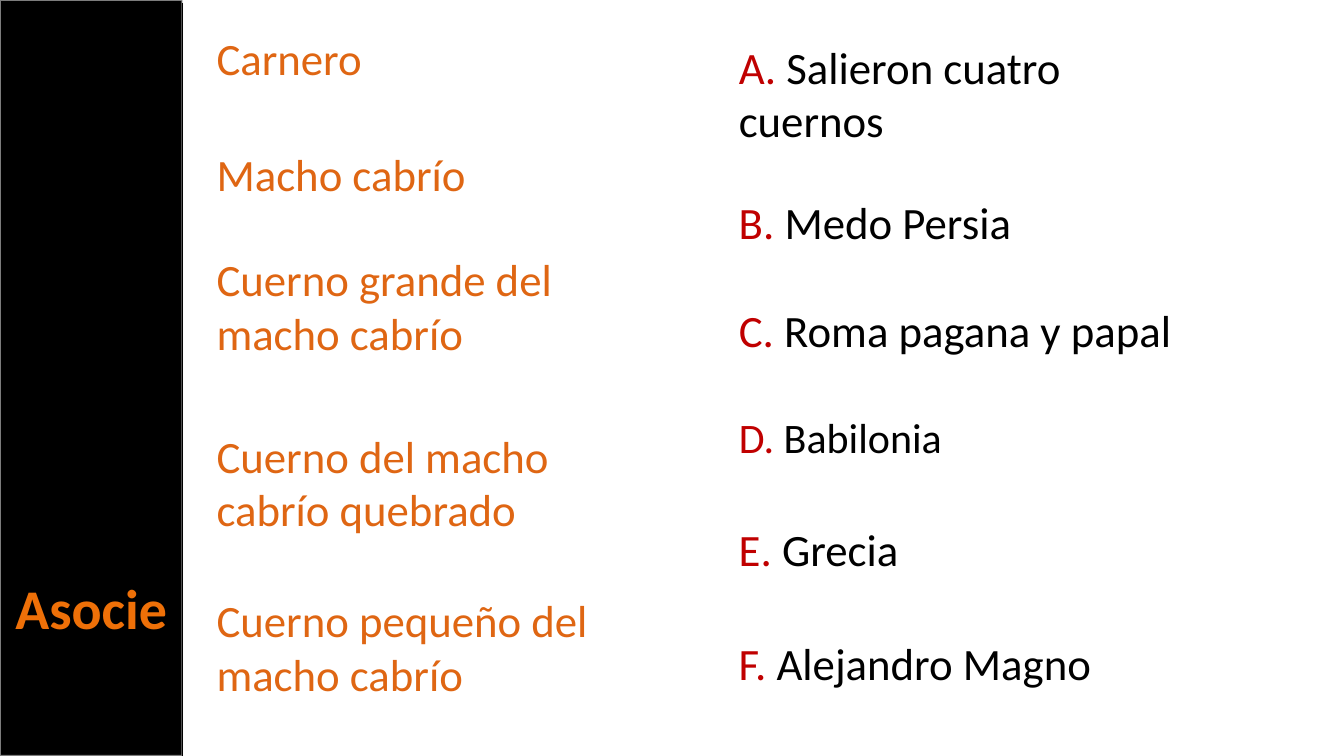
from pptx import Presentation
from pptx.dml.color import RGBColor
from pptx.enum import shapes, text
from pptx.oxml.ns import qn
from pptx.util import Pt
from lxml import etree

BLACK = RGBColor(0x00, 0x00, 0x00)
PALE = RGBColor(0xF9, 0xF9, 0xF9)
ORANGE = RGBColor(0xDF, 0x66, 0x13)
BRIGHT_ORANGE = RGBColor(0xEE, 0x70, 0x08)
RED = RGBColor(0xC0, 0x00, 0x00)
FONT = "Calibri"

# Content: symbols (text, top, width, lines)
HEADING = "Asocie"
SYMBOLS = [
    ("Carnero", 18.7, 330, 1),
    ("Macho cabrío", 101.5, 276, 1),
    ("Cuerno grande del macho cabrío", 176.4, 297, 2),
    ("Cuerno del macho cabrío quebrado", 302.4, 316, 2),
    ("Cuerno pequeño del macho cabrío", 419.8, 330, 2),
]
# Meanings (text, top, width, lines, size); letters follow the order
MEANINGS = [
    ("Salieron cuatro cuernos", 24.5, 326, 2, 32),
    ("Medo Persia", 135.4, 360, 1, 32),
    ("Roma pagana y papal", 212.4, 433, 1, 32),
    ("Babilonia", 290.2, 301, 1, 30),
    ("Grecia", 369.4, 402, 1, 32),
    ("Alejandro Magno", 450.7, 402, 1, 32),
]

# Layout
SLIDE_W, SLIDE_H = 960, 540
BAR_W = 130.3
SYMBOL_LEFT, MEANING_LEFT = 147.6, 520.6
LINE_SPACING, INSETS = 1.2, 7.2

deck = Presentation()
deck.slide_width, deck.slide_height = Pt(SLIDE_W), Pt(SLIDE_H)
slide = deck.slides.add_slide(deck.slide_layouts[5])


def write(paragraph, pieces, size, bold=False):
    for words, color in pieces:
        run = paragraph.add_run()
        run.text = words
        run.font.name, run.font.size, run.font.bold = FONT, Pt(size), bold
        run.font.color.rgb = color


def add_entry(pieces, left, top, width, lines, size=32):
    height = lines * size * LINE_SPACING + INSETS
    entry = slide.shapes.add_textbox(Pt(left), Pt(top), Pt(width), Pt(height))
    entry.text_frame.word_wrap = True
    entry.text_frame.auto_size = text.MSO_AUTO_SIZE.SHAPE_TO_FIT_TEXT
    write(entry.text_frame.paragraphs[0], pieces, size)


# Side bar, behind the heading
bar = slide.shapes.add_shape(shapes.MSO_SHAPE.RECTANGLE, 0, 0, Pt(BAR_W), Pt(SLIDE_H))
bar.shadow.inherit = False
bar.fill.solid()
bar.fill.fore_color.rgb = BLACK
bar.line.color.rgb = PALE
bar.line.width = Pt(1.35)
outline_color = bar.line.fill._xPr.find(".//" + qn("a:srgbClr"))
etree.SubElement(outline_color, qn("a:alpha")).set("val", "50000")

# Heading
heading = slide.shapes.title
heading._element.addprevious(bar._element)
heading.left, heading.top = Pt(0), Pt(406.1)
heading.width, heading.height = Pt(BAR_W), Pt(55.4)
heading.text_frame.word_wrap = True
heading.text_frame.auto_size = text.MSO_AUTO_SIZE.NONE
heading.text_frame.vertical_anchor = text.MSO_ANCHOR.TOP
heading.text_frame.paragraphs[0].alignment = text.PP_ALIGN.CENTER
write(heading.text_frame.paragraphs[0], [(HEADING, BRIGHT_ORANGE)], 40, bold=True)

# Symbols and lettered meanings
for symbol, top, width, lines in SYMBOLS:
    add_entry([(symbol, ORANGE)], SYMBOL_LEFT, top, width, lines)

for letter, (meaning, top, width, lines, size) in zip("ABCDEF", MEANINGS):
    add_entry([(f"{letter}. ", RED), (meaning, BLACK)], MEANING_LEFT, top, width, lines, size)

# Bar edge
edge = slide.shapes.add_connector(
    shapes.MSO_CONNECTOR.STRAIGHT, Pt(BAR_W), Pt(2.2), Pt(BAR_W), Pt(SLIDE_H))
edge.line.color.rgb = BLACK
edge.line.width = Pt(0.85)
etree.SubElement(edge._element.spPr, qn("a:effectLst"))

deck.save("out.pptx")
